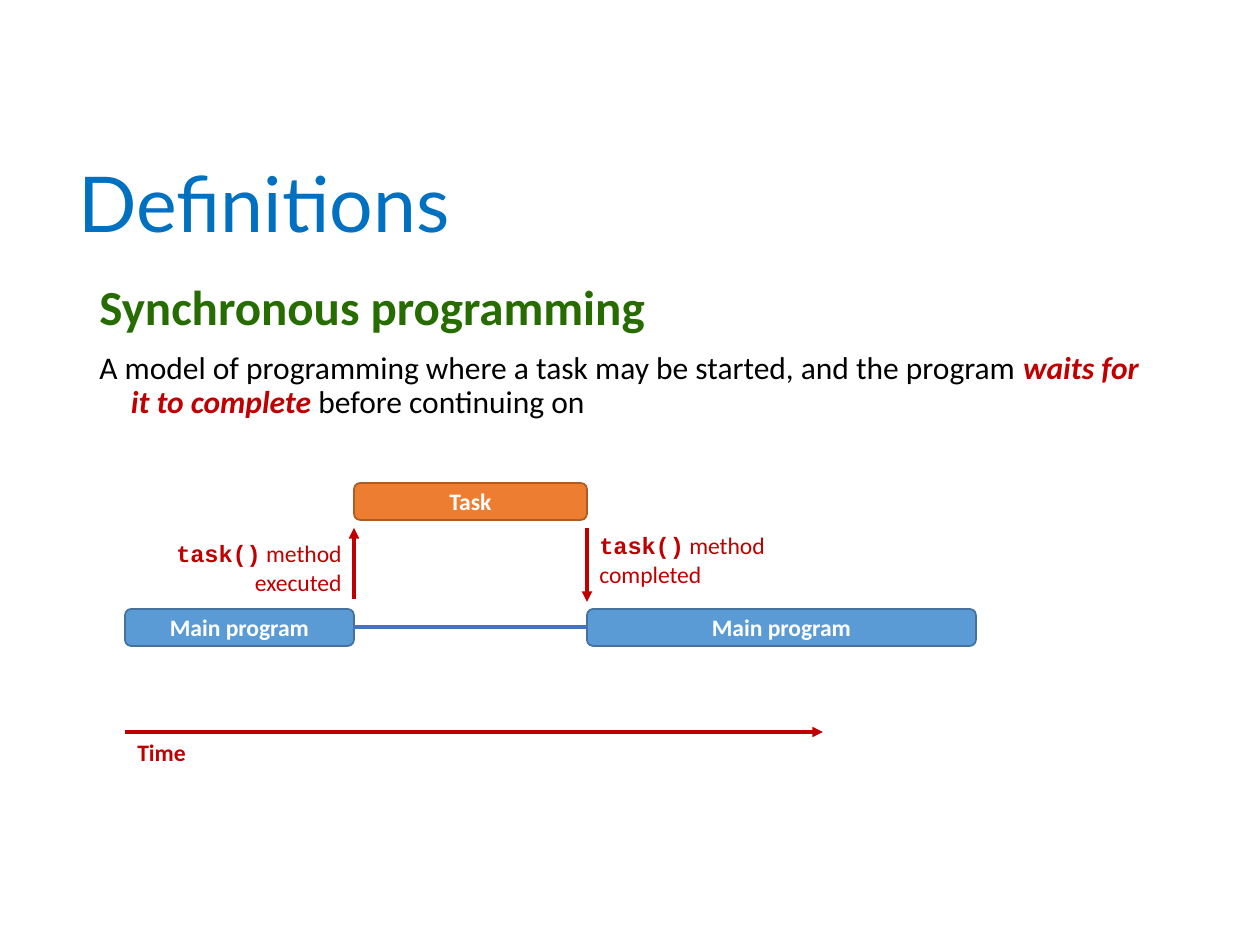
from lxml.etree import SubElement
from pptx import Presentation
from pptx.dml.color import RGBColor
from pptx.enum.shapes import MSO_CONNECTOR as Connector, MSO_SHAPE as Shape
from pptx.enum.text import MSO_ANCHOR as Anchor, PP_ALIGN as Align
from pptx.oxml.ns import qn
from pptx.util import Emu, Pt

SCALE = 914400 / 126
COLORS = {
    "title": "0070C0", "heading": "266C00", "body": "000000", "accent": "C00000",
    "program": "5B9BD5", "program_edge": "43739E", "task": "ED7D31",
    "task_edge": "AF5C24", "wait": "4472C4", "white": "FFFFFF",
}
TIMELINE_LEFT, TASK_START, TASK_END, PROGRAM_END = 125, 354, 587, 976
TASK_TOP, PROGRAM_TOP, BAR_HEIGHT, TIME_Y = 483, 609, 37, 732


def px(*lengths):
    """Turn pixel lengths into EMU."""
    return [Emu(round(length * SCALE)) for length in lengths]


def rgb(name):
    """Look up a named colour."""
    return RGBColor.from_string(COLORS[name])


def add_run(paragraph, text, size, color, bold=False, italic=False, font="Calibri"):
    """Append one formatted run."""
    run = paragraph.add_run()
    run.text = text
    run.font.size = Pt(size)
    run.font.name = font
    run.font.bold = bold
    run.font.italic = italic
    run.font.color.rgb = rgb(color)


def add_text_box(slide, box, wrap=True, anchor=Anchor.TOP):
    """Add an empty text box and return its text frame."""
    frame = slide.shapes.add_textbox(*px(*box)).text_frame
    frame.word_wrap = wrap
    frame.vertical_anchor = anchor
    return frame


def add_title(slide, text):
    """Add the slide title."""
    paragraph = add_text_box(slide, (66, 156, 1108, 103), anchor=Anchor.MIDDLE).paragraphs[0]
    paragraph.line_spacing = 0.9
    add_run(paragraph, text, 44, "title", font="Lato")


def add_definition(slide, term, parts):
    """Add a term and its definition with hanging indents."""
    frame = add_text_box(slide, (87, 277, 1086, 169))
    heading, definition = frame.paragraphs[0], frame.add_paragraph()
    for paragraph, space in ((heading, 10), (definition, 9)):
        paragraph.line_spacing = 0.9
        paragraph.space_before = Pt(space)
        properties = paragraph._p.get_or_add_pPr()
        properties.set("marL", "228600")
        properties.set("indent", "-228600")
    add_run(heading, term, 28, "heading", bold=True)
    for text, emphasis in parts:
        add_run(definition, text, 18, "accent" if emphasis else "body", emphasis, emphasis)


def add_bar(slide, left, right, top, text, kind):
    """Add a labelled rounded bar spanning a stretch of time."""
    bar = slide.shapes.add_shape(
        Shape.ROUNDED_RECTANGLE, *px(left, top, right - left, BAR_HEIGHT))
    bar.shadow.inherit = False
    bar.fill.solid()
    bar.fill.fore_color.rgb = rgb(kind)
    bar.line.color.rgb = rgb(f"{kind}_edge")
    bar.line.width = Pt(1)
    bar.text_frame.vertical_anchor = Anchor.MIDDLE
    paragraph = bar.text_frame.paragraphs[0]
    paragraph.alignment = Align.CENTER
    add_run(paragraph, text, 13.5, "white", bold=True)


def add_line(slide, start, end, color, arrow=True):
    """Add a straight line, with an arrowhead at its end if wanted."""
    line = slide.shapes.add_connector(Connector.STRAIGHT, *px(*start, *end))
    line.line.color.rgb = rgb(color)
    line.line.width = Pt(2)
    if arrow:
        SubElement(line.line._get_or_add_ln(), qn("a:tailEnd"), type="triangle")
    SubElement(line._element.spPr, qn("a:effectLst"))


def add_call_label(slide, box, lines, align):
    """Add a label that starts with the method call in code type."""
    frame = add_text_box(slide, box)
    for index, text in enumerate(lines):
        paragraph = frame.add_paragraph() if index else frame.paragraphs[0]
        paragraph.alignment = align
        if index == 0:
            add_run(paragraph, "task()", 13.5, "accent", bold=True, font="Courier New")
        add_run(paragraph, text, 13.5, "accent")


def main():
    """Build and save the slide."""
    presentation = Presentation()
    presentation.slide_width, presentation.slide_height = px(1260, 945)
    slide = presentation.slides.add_slide(presentation.slide_layouts[6])

    add_title(slide, "Definitions")
    add_definition(slide, "Synchronous programming", [
        ("A model of programming where a task may be started, and the program ", False),
        ("waits for it to complete", True),
        (" before continuing on", False),
    ])

    add_bar(slide, TASK_END, PROGRAM_END, PROGRAM_TOP, "Main program", "program")
    add_bar(slide, TASK_START, TASK_END, TASK_TOP, "Task", "task")

    add_line(slide, (TIMELINE_LEFT, TIME_Y), (823, TIME_Y), "accent")
    time_frame = add_text_box(slide, (TIMELINE_LEFT, TIME_Y, 74, 42), wrap=False)
    add_run(time_frame.paragraphs[0], "Time", 13.5, "accent", bold=True)

    add_line(slide, (TASK_START, 599), (TASK_START, 528), "accent")
    add_call_label(slide, (137, 533, 217, 71), [" method", "executed"], Align.RIGHT)
    add_line(slide, (TASK_END, 528), (TASK_END, 602), "accent")
    add_call_label(slide, (TASK_END, 525, 203, 71), [" method completed"], Align.LEFT)

    add_bar(slide, TIMELINE_LEFT, TASK_START, PROGRAM_TOP, "Main program", "program")
    add_line(slide, (TASK_START, 627), (TASK_END, 627), "wait", arrow=False)
    presentation.save("out.pptx")


if __name__ == "__main__":
    main()
